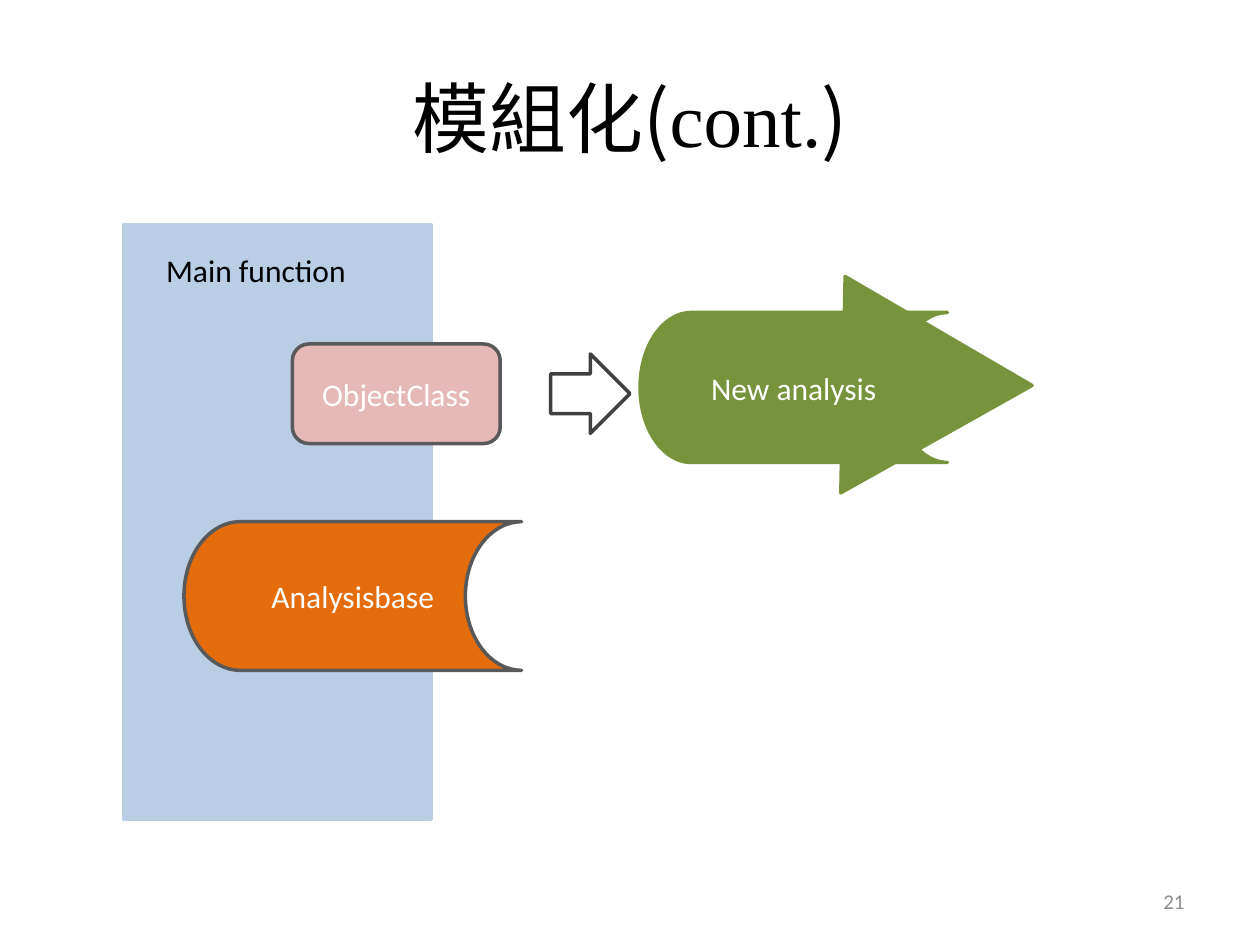
from pptx import Presentation
from pptx.dml.color import RGBColor
from pptx.enum.shapes import MSO_SHAPE
from pptx.enum.text import MSO_ANCHOR, PP_ALIGN
from pptx.oxml.ns import qn
from pptx.util import Inches, Pt
from lxml import etree

RECTANGLE = MSO_SHAPE.RECTANGLE
ROUNDED = MSO_SHAPE.ROUNDED_RECTANGLE
STORAGE = MSO_SHAPE.FLOWCHART_STORED_DATA
ARROW = MSO_SHAPE.RIGHT_ARROW
TRIANGLE = MSO_SHAPE.ISOSCELES_TRIANGLE
MIDDLE = MSO_ANCHOR.MIDDLE
LEFT, CENTER, RIGHT = PP_ALIGN.LEFT, PP_ALIGN.CENTER, PP_ALIGN.RIGHT

COLORS = {
    "black": "000000", "white": "FFFFFF", "number": "8C8C8C",
    "blue": "B9CDE5", "orange": "E46C0A", "pink": "E6B9B8",
    "green": "77933C", "outline": "595959", "arrow": "404040",
}
CJK_FONT = "Noto Sans CJK SC"


def write(shape, text, size, color, alignment):
    shape.text_frame.word_wrap = True
    shape.text_frame.vertical_anchor = MIDDLE
    paragraph = shape.text_frame.paragraphs[0]
    paragraph.text = text
    paragraph.alignment = alignment
    paragraph.font.name = "Calibri"
    paragraph.font.size = Pt(size)
    paragraph.font.color.rgb = RGBColor.from_string(COLORS[color])


def draw(shapes, kind, box, fill, line, text=None):
    shape = shapes.add_shape(kind, *map(Inches, box))
    shape.shadow.inherit = False
    shape.fill.solid()
    shape.fill.fore_color.rgb = RGBColor.from_string(COLORS[fill])
    shape.line.color.rgb = RGBColor.from_string(COLORS[line])
    shape.line.width = Pt(2)
    if text:
        write(shape, text, 18, "white", CENTER)
    return shape


presentation = Presentation()
presentation.slide_width, presentation.slide_height = Inches(10), Inches(7.5)
slide = presentation.slides.add_slide(presentation.slide_layouts[5])
shapes = slide.shapes

# Title in two typefaces
title = shapes.title
title.left, title.top, title.width, title.height = map(Inches, (0.5, 0.3, 9, 1.25))
title.text_frame.vertical_anchor = MIDDLE
paragraph = title.text_frame.paragraphs[0]
paragraph.alignment = CENTER
paragraph.font.size = Pt(44)
paragraph.font.color.rgb = RGBColor.from_string(COLORS["black"])
for text, font in (("模組化(", CJK_FONT), ("cont.", "Times New Roman"), (")", CJK_FONT)):
    run = paragraph.add_run()
    run.text = text
    run.font.name = font
    etree.SubElement(run.font._element, qn("a:ea"), typeface=CJK_FONT)

# Slide number
number = shapes.add_textbox(*map(Inches, (7.17, 6.95, 2.33, 0.4)))
write(number, "21", 12, "number", RIGHT)

# Main function and the modules it holds
draw(shapes, RECTANGLE, (0.98, 1.78, 2.44, 4.72), "blue", "blue")
draw(shapes, STORAGE, (1.46, 4.14, 2.68, 1.18), "orange", "outline", "Analysisbase")
draw(shapes, ROUNDED, (2.32, 2.73, 1.65, 0.79), "pink", "outline", "ObjectClass")
label = shapes.add_textbox(*map(Inches, (1.22, 1.94, 1.73, 0.4)))
write(label, "Main function", 18, "black", LEFT)

# Arrow to the new analysis
draw(shapes, ARROW, (4.37, 2.81, 0.63, 0.63), "white", "arrow")

# New analysis: storage shape with a pointed head
group = shapes.add_group_shape()
head = draw(group.shapes, TRIANGLE, (6.2, 2.1, 1.74, 1.48), "green", "green")
head.rotation = 330.7
draw(group.shapes, STORAGE, (5.08, 2.48, 2.44, 1.19), "green", "green", "New analysis")

presentation.save("out.pptx")
